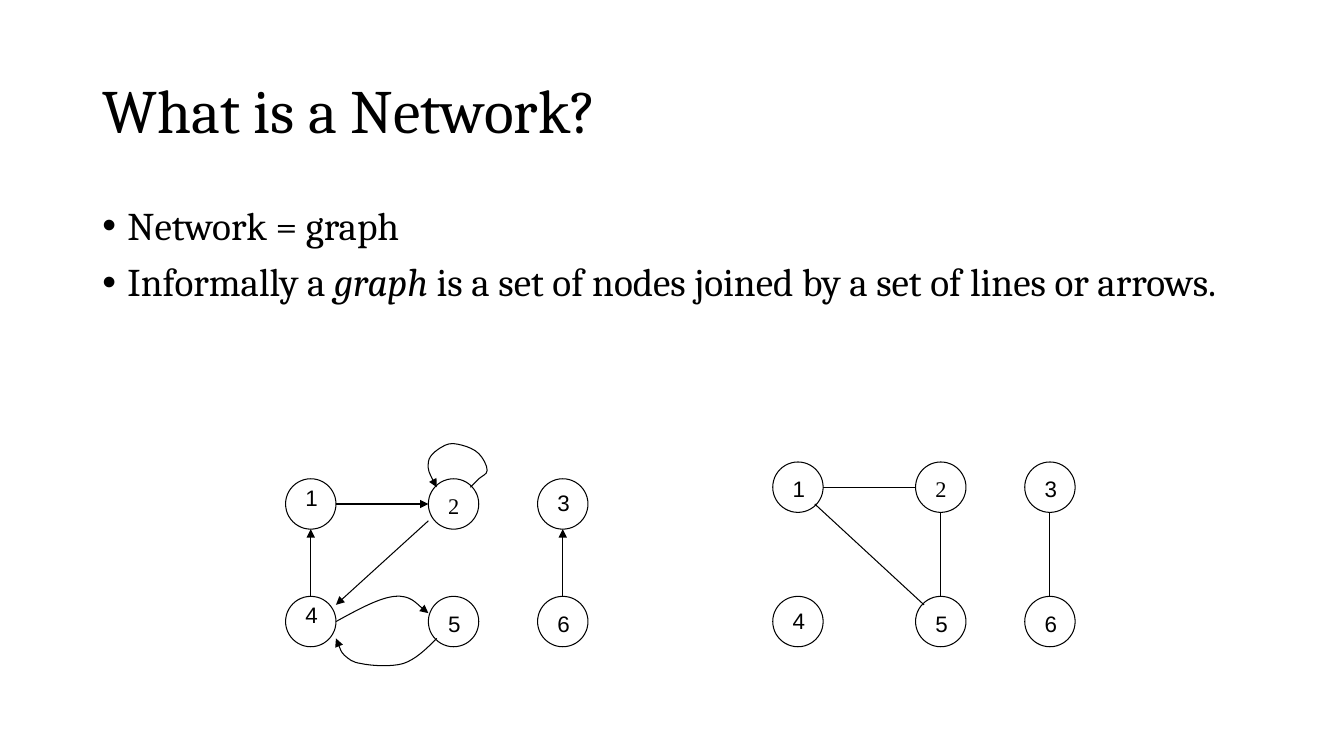
"""Build a slide that shows a directed and an undirected graph."""
from dataclasses import dataclass

from lxml.etree import SubElement
from pptx import Presentation
from pptx.dml.color import RGBColor
from pptx.dml.line import LineFormat
from pptx.enum.shapes import MSO_CONNECTOR, MSO_SHAPE
from pptx.enum.text import MSO_ANCHOR
from pptx.oxml.ns import qn
from pptx.shapes.shapetree import SlideShapes
from pptx.text.text import TextFrame, _Paragraph
from pptx.util import Pt

BLACK = RGBColor(0, 0, 0)
NODE_SIZE = 36
COLUMN_OFFSETS = (0, 102, 180)
LABEL_INDENT = 7

Point = tuple[float, float]


@dataclass(frozen=True)
class Graph:
    """Node grid with label drops in reading order, and straight edges."""
    left: float
    row_tops: tuple[float, float]
    label_drops: tuple[float, ...]
    edges: tuple[tuple[Point, Point], ...]
    directed: bool


@dataclass(frozen=True)
class CurvedEdge:
    """Bezier edge: a start point, then three points per segment."""
    points: tuple[Point, ...]
    arrow_end: str


DIRECTED = Graph(
    204, (342, 426), (0, 6, 3.6, 0, 6, 6),
    (((222, 426), (222, 378)), ((240, 360), (306, 360)),
     ((306, 372), (240, 432)), ((402, 426), (402, 378))),
    True,
)
UNDIRECTED = Graph(
    552, (330, 426), (6, 6, 6, 4, 6, 6),
    (((582, 360), (660, 432)), ((588, 348), (654, 348)),
     ((672, 426), (672, 366)), ((750, 426), (750, 366))),
    False,
)
CURVED_EDGES = (
    CurvedEdge(
        ((312, 348), (308, 341), (305, 335), (306, 330),
         (306.5, 324.5), (314, 320), (318, 318),
         (322, 316), (326, 317), (330, 318),
         (334, 319), (339, 321), (342, 324),
         (345, 327), (348, 332.5), (348, 336),
         (348, 339), (344, 340), (342, 342),
         (340, 344), (337, 347), (336, 348)),
        "a:headEnd",
    ),
    CurvedEdge(
        ((240, 444), (255.5, 435.5), (271, 427), (282, 426),
         (293, 425), (301.5, 435), (306, 438)),
        "a:tailEnd",
    ),
    CurvedEdge(
        ((312, 456), (304.5, 463.5), (297, 471), (288, 474),
         (279, 476.5), (265, 475.5), (258, 474),
         (251.5, 473), (249.5, 471), (246, 468),
         (243.5, 465.5), (241, 458.5), (240, 456)),
        "a:tailEnd",
    ),
)


def set_line(line: LineFormat, arrow_end: str = "") -> None:
    """Draw a thin black line, with an arrowhead at the named end."""
    line.color.rgb = BLACK
    line.width = Pt(0.75)
    if arrow_end:
        SubElement(line._get_or_add_ln(), qn(arrow_end), type="triangle")


def set_font(paragraph: _Paragraph, size: float, typeface: str) -> None:
    """Set the paragraph's font in black."""
    paragraph.font.size = Pt(size)
    paragraph.font.name = typeface
    paragraph.font.color.rgb = BLACK


def add_text(shapes: SlideShapes, left: float, top: float,
             width: float, height: float, wrap: bool) -> TextFrame:
    """Add a text box and return its text frame."""
    frame = shapes.add_textbox(Pt(left), Pt(top), Pt(width), Pt(height)).text_frame
    frame.word_wrap = wrap
    return frame


def add_node(shapes: SlideShapes, left: float, top: float,
             number: int, label_drop: float) -> None:
    """Add a circle and its number."""
    circle = shapes.add_shape(MSO_SHAPE.OVAL, Pt(left), Pt(top),
                              Pt(NODE_SIZE), Pt(NODE_SIZE))
    circle.shadow.inherit = False
    circle.fill.background()
    set_line(circle.line)
    label = add_text(shapes, left + LABEL_INDENT, top + label_drop, 23, 26.6, False)
    label.text = str(number)
    set_font(label.paragraphs[0], 16, "Times New Roman" if number == 2 else "Arial")


def add_straight_edge(shapes: SlideShapes, start: Point, end: Point,
                      directed: bool) -> None:
    """Add a line, or an arrow if directed."""
    edge = shapes.add_connector(MSO_CONNECTOR.STRAIGHT,
                                *(Pt(length) for length in start + end))
    set_line(edge.line, "a:tailEnd" if directed else "")
    SubElement(edge._element.spPr, qn("a:effectLst"))


def add_curved_edge(shapes: SlideShapes, curve: CurvedEdge) -> None:
    """Add a freeform whose vertices are grouped into cubic segments."""
    start, *vertices = [(Pt(x), Pt(y)) for x, y in curve.points]
    builder = shapes.build_freeform(*start)
    builder.add_line_segments(vertices, close=False)
    edge = builder.convert_to_shape()
    edge.shadow.inherit = False
    edge.fill.background()
    set_line(edge.line, curve.arrow_end)
    outline = next(edge._element.iter(qn("a:path")))
    segments = outline.findall(qn("a:lnTo"))
    for first in range(0, len(segments), 3):
        cubic = SubElement(outline, qn("a:cubicBezTo"))
        for segment in segments[first:first + 3]:
            cubic.append(segment[0])
            outline.remove(segment)


def add_graph(shapes: SlideShapes, graph: Graph) -> None:
    """Add the nodes and straight edges of a graph."""
    for index, label_drop in enumerate(graph.label_drops):
        row, column = divmod(index, len(COLUMN_OFFSETS))
        add_node(shapes, graph.left + COLUMN_OFFSETS[column],
                 graph.row_tops[row], index + 1, label_drop)
    for start, end in graph.edges:
        add_straight_edge(shapes, start, end, graph.directed)


def add_heading(shapes: SlideShapes) -> None:
    """Add the title."""
    title = add_text(shapes, 66, 28.8, 828, 104.4, True)
    title.vertical_anchor = MSO_ANCHOR.MIDDLE
    title.text = "What is a Network?"
    title.paragraphs[0].line_spacing = 0.9
    set_font(title.paragraphs[0], 44, "Cambria")


def add_definition(shapes: SlideShapes) -> None:
    """Add the bulleted definition."""
    definition = add_text(shapes, 66, 144, 828, 342.7, True)
    definition.text = "Network = graph\nInformally a "
    informal = definition.paragraphs[1]
    term = informal.add_run()
    term.text = "graph"
    term.font.italic = True
    informal.add_run().text = " is a set of nodes joined by a set of lines or arrows."
    for bullet in definition.paragraphs:
        bullet.line_spacing = 0.9
        bullet.space_before = Pt(10)
        properties = bullet._p.get_or_add_pPr()
        properties.set("marL", str(Pt(18)))
        properties.set("indent", str(Pt(-18)))
        SubElement(properties, qn("a:buFont"), typeface="Arial")
        SubElement(properties, qn("a:buChar"), char="•")
        set_font(bullet, 28, "Cambria")


def main() -> None:
    """Build and save the slide."""
    presentation = Presentation()
    presentation.slide_width, presentation.slide_height = Pt(960), Pt(540)
    shapes = presentation.slides.add_slide(presentation.slide_layouts[6]).shapes
    add_heading(shapes)
    add_definition(shapes)
    for graph in (DIRECTED, UNDIRECTED):
        add_graph(shapes, graph)
    for curve in CURVED_EDGES:
        add_curved_edge(shapes, curve)
    presentation.save("out.pptx")


if __name__ == "__main__":
    main()
